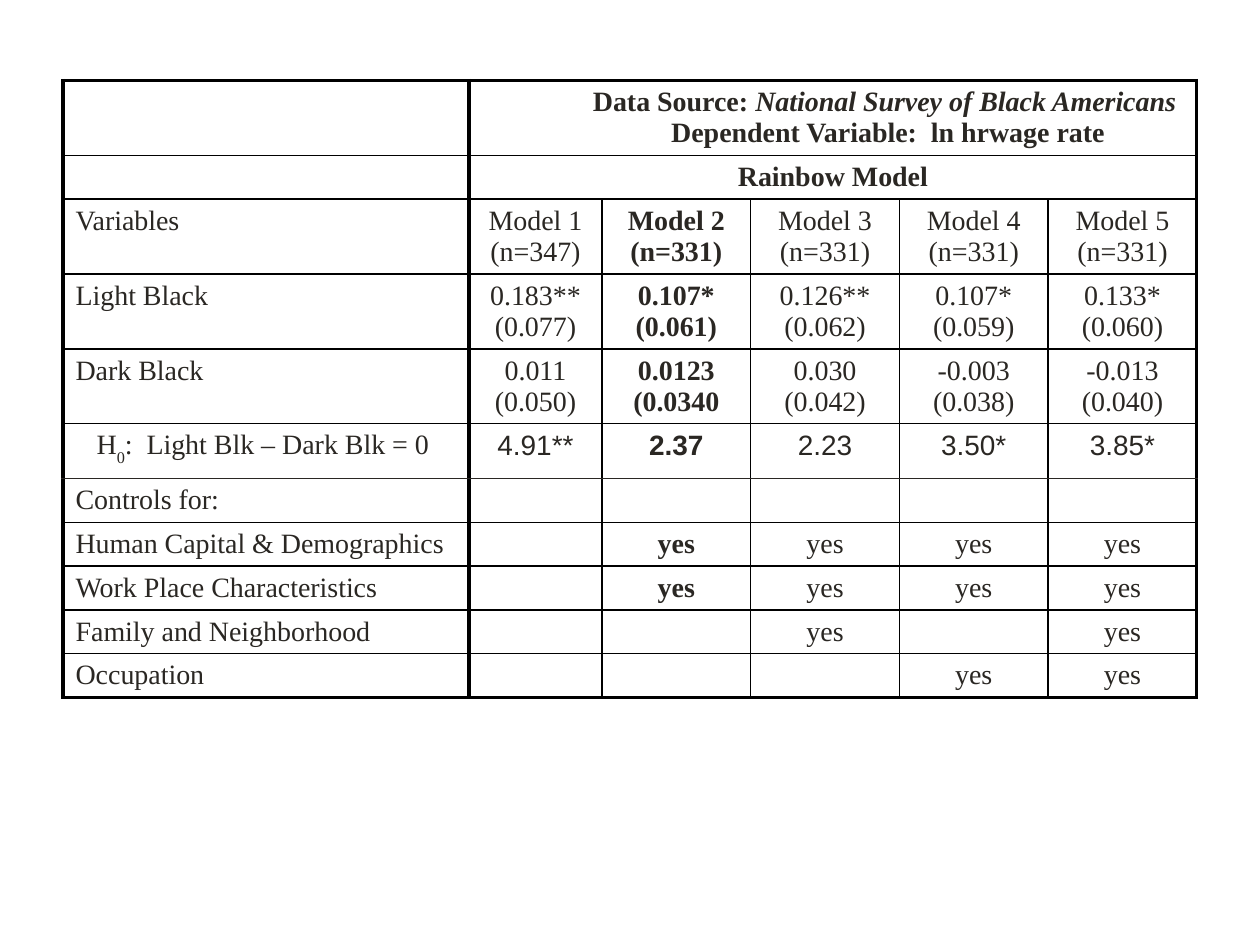
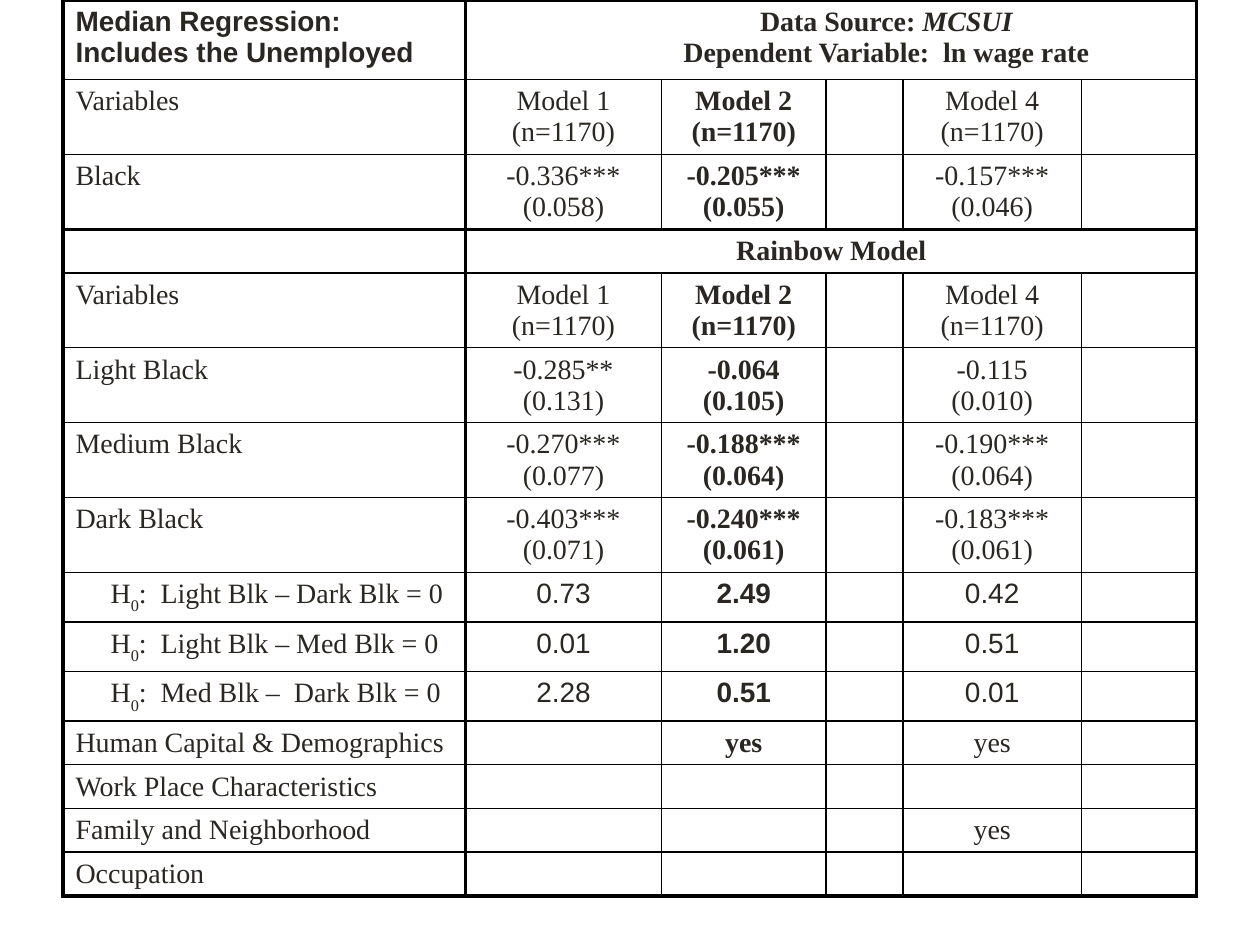
from dataclasses import dataclass, field

from lxml.etree import SubElement
from pptx import Presentation
from pptx.dml.color import RGBColor
from pptx.enum.text import MSO_ANCHOR, PP_ALIGN
from pptx.oxml.ns import qn
from pptx.util import Pt

ONE_LINE, TWO_LINES = 25, 42.7
HEADER_INDENT = 63


def color(code):
    return RGBColor.from_string(code)


@dataclass
class Row:
    """A label and either five values or one heading across all of them."""
    label: str = ""
    values: list = field(default_factory=lambda: [""] * 5)
    heading: list = None
    height: float = ONE_LINE
    hypothesis_indent: float = 0
    heading_indent: float = 0
    bold_label: bool = False


def estimates(label, *values):
    return Row(label, list(values), height=TWO_LINES)


def source_row(name, variable, **options):
    heading = [[("Data Source: ", ""), (name, "italic")],
               [("Dependent Variable:  " + variable, "")]]
    return Row(heading=heading, heading_indent=HEADER_INDENT, **options)


def rainbow_row():
    return Row(heading=[[("Rainbow Model", "")]])


class Deck:
    serif, sans = "Times New Roman", "Arial"
    ink, black = "2A2723", "000000"
    size, thin, thick = 16, 1, 2
    bold_column = 2

    def __init__(self):
        self.deck = Presentation()
        self.deck.slide_width, self.deck.slide_height = Pt(720), Pt(540)
        self.page = None

    def new_page(self):
        self.page = self.deck.slides.add_slide(self.deck.slide_layouts[6])

    def fill_text(self, cell, paragraphs, font=serif, bold=False, centred=True,
                  indent=0, margin=0):
        """Each paragraph is a list of (text, style) spans."""
        for index, spans in enumerate(paragraphs):
            frame = cell.text_frame
            para = frame.add_paragraph() if index else frame.paragraphs[0]
            para.alignment = PP_ALIGN.CENTER if centred else PP_ALIGN.LEFT
            properties = para._p.get_or_add_pPr()
            properties.set("marL", str(Pt(margin)))
            properties.set("indent", str(Pt(indent)))
            para.font.name, para.font.size, para.font.bold = font, Pt(self.size), bold
            para.font.color.rgb = color(self.ink)
            for text, style in spans:
                if not text:
                    SubElement(para._p, qn("a:endParaRPr"), sz=str(self.size * 100))
                    continue
                span = para.add_run()
                span.text = text
                if style == "italic":
                    span.font.italic = True
                elif style == "subscript":
                    span._r.get_or_add_rPr().set("baseline", "-30000")

    def border(self, cell, side, width, code):
        line = SubElement(cell._tc.get_or_add_tcPr(), qn("a:ln" + side), w=str(Pt(width)))
        fill = SubElement(line, qn("a:solidFill"))
        SubElement(fill, qn("a:srgbClr"), val=code)

    def frame_cells(self, table, rules):
        """Draw thick outer lines, a thick line after the labels, and thin lines elsewhere.

        rules gives the (width, colour) of inner horizontal lines that differ.
        """
        last_row, last_column = len(table.rows), len(table.columns)
        edge = (self.thick, self.black)
        across = {0: edge, last_row: edge, **rules}
        down = {0: edge, 1: edge, last_column: edge}
        plain = (self.thin, self.black)
        for r in range(last_row):
            for c in range(last_column):
                cell = table.cell(r, c)
                right = last_column if cell.is_merge_origin else c + 1
                if not cell.is_spanned:
                    self.border(cell, "L", *down.get(c, plain))
                if not cell.is_spanned or right == last_column:
                    self.border(cell, "R", *down.get(right, plain))
                self.border(cell, "T", *across.get(r, plain))
                self.border(cell, "B", *across.get(r + 1, plain))
                cell.fill.background()

    def label(self, cell, row):
        if row.hypothesis_indent:
            spans = [("H", ""), ("0", "subscript"), (":  " + row.label, "")]
        else:
            spans = [(row.label, "")]
        self.fill_text(cell, [spans], font=self.sans if row.bold_label else self.serif,
                       bold=row.bold_label, centred=False, margin=row.hypothesis_indent)

    def table(self, top, widths, rows, rules):
        shape = self.page.shapes.add_table(len(rows), len(widths), Pt(36), Pt(top),
                                           Pt(sum(widths)), Pt(sum(row.height for row in rows)))
        table = shape.table
        table.first_row = table.horz_banding = False
        for column, width in zip(table.columns, widths):
            column.width = Pt(width)
        for r, row in enumerate(rows):
            table.rows[r].height = Pt(row.height)
            self.label(table.cell(r, 0), row)
            if row.heading:
                cell = table.cell(r, 1)
                cell.merge(table.cell(r, len(widths) - 1))
                self.fill_text(cell, row.heading, bold=True, indent=row.heading_indent)
                if not row.heading_indent:
                    cell.vertical_anchor = MSO_ANCHOR.BOTTOM
                continue
            font = self.sans if row.hypothesis_indent else self.serif
            for c, value in enumerate(row.values, 1):
                lines = [[(line, "")] for line in value.split("\n")]
                self.fill_text(table.cell(r, c), lines, font=font, bold=c == self.bold_column)
        self.frame_cells(table, rules)


def survey_page(deck):
    deck.new_page()
    rows = [
        source_row("National Survey of Black Americans ", "ln hrwage rate", height=TWO_LINES),
        rainbow_row(),
        estimates("Variables", "Model 1\n(n=347)", "Model 2\n(n=331)", "Model 3\n(n=331)",
                  "Model 4\n(n=331)", "Model 5\n(n=331)"),
        estimates("Light Black", "0.183**\n(0.077)", "0.107*\n(0.061)", "0.126**\n(0.062)",
                  "0.107*\n(0.059)", "0.133*\n(0.060)"),
        estimates("Dark Black", "0.011\n(0.050)", "0.0123\n(0.0340", "0.030\n(0.042)",
                  "-0.003\n(0.038)", "-0.013\n(0.040)"),
        Row("Light Blk – Dark Blk = 0", ["4.91**", "2.37", "2.23", "3.50*", "3.85*"],
            height=31.4, hypothesis_indent=12),
        Row("Controls for:"),
        Row("Human Capital & Demographics", ["", "yes", "yes", "yes", "yes"]),
        Row("Work Place Characteristics", ["", "yes", "yes", "yes", "yes"]),
        Row("Family and Neighborhood", ["", "", "yes", "", "yes"]),
        Row("Occupation", ["", "", "", "yes", "yes"]),
    ]
    deck.table(46, [232, 76] + [85] * 4, rows, {6: (deck.thin, deck.ink)})


def median_page(deck):
    deck.new_page()
    models = estimates("Variables", "Model 1\n(n=1170)", "Model 2\n(n=1170)", "",
                       "Model 4\n(n=1170)", "")
    tests = [("Light Blk – Dark Blk = 0", "0.73", "2.49", "0.42"),
             ("Light Blk – Med Blk = 0", "0.01", "1.20", "0.51"),
             ("Med Blk –  Dark Blk = 0", "2.28", "0.51", "0.01")]
    rows = [
        source_row("MCSUI", "ln wage rate", height=45.4, bold_label=True,
                   label="Median Regression: Includes the Unemployed"),
        models,
        estimates("Black", "-0.336***\n(0.058)", "-0.205***\n(0.055)", "",
                  "-0.157***\n(0.046)", ""),
        rainbow_row(),
        models,
        estimates("Light Black", "-0.285**\n(0.131)", "-0.064\n(0.105)", "",
                  "-0.115\n(0.010)", ""),
        estimates("Medium Black", "-0.270***\n(0.077)", "-0.188***\n(0.064)", "",
                  "-0.190***\n(0.064)", ""),
        estimates("Dark Black", "-0.403***\n(0.071)", "-0.240***\n(0.061)", "",
                  "-0.183***\n(0.061)", ""),
        *[Row(label, [first, second, "", fourth, ""], height=28.3, hypothesis_indent=20)
          for label, first, second, fourth in tests],
        Row("Human Capital & Demographics", ["", "yes", "", "yes", ""]),
        Row("Work Place Characteristics"),
        Row("Family and Neighborhood", ["", "", "", "yes", ""]),
        Row("Occupation"),
    ]
    deck.table(0, [230, 112, 94, 44, 102, 66], rows, {3: (deck.thick, deck.black)})


def main():
    deck = Deck()
    survey_page(deck)
    median_page(deck)
    deck.deck.save("out.pptx")


if __name__ == "__main__":
    main()
